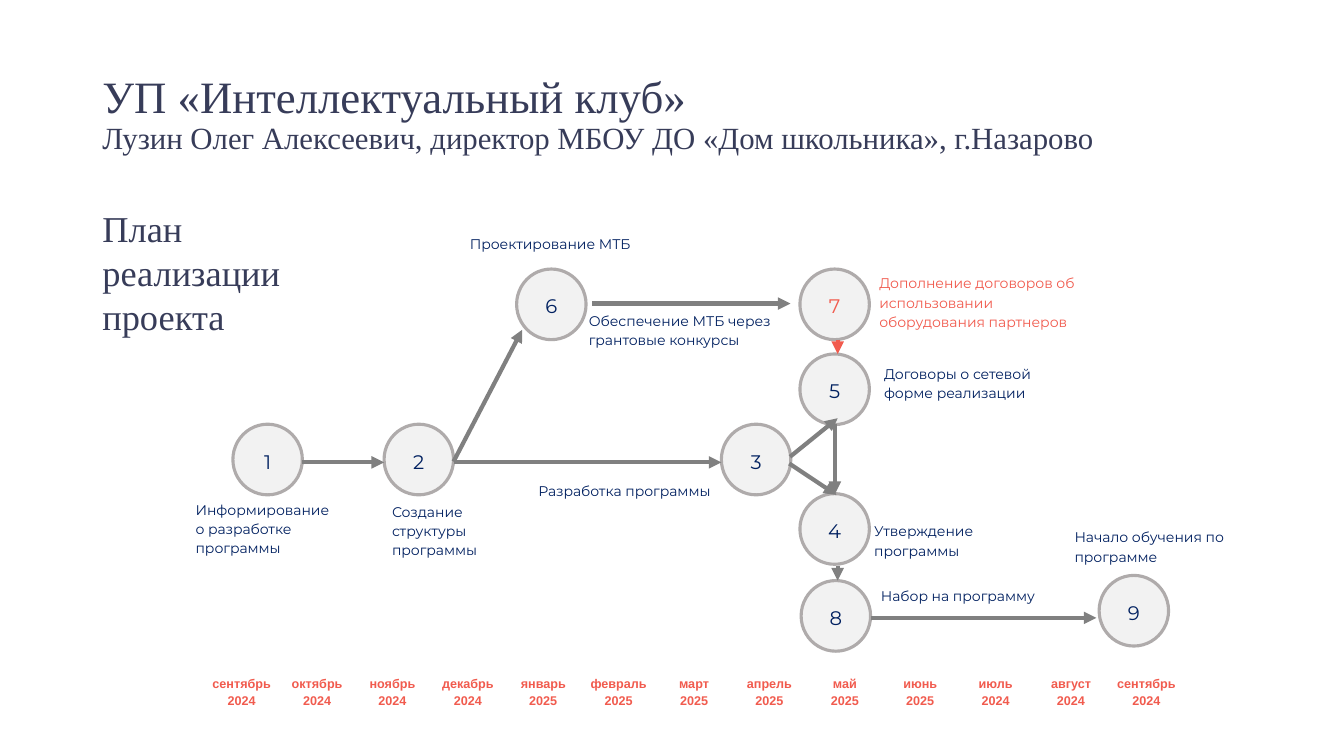
"""Build the project roadmap slide with numbered milestones and a month scale."""
from dataclasses import dataclass

from lxml.etree import SubElement
from pptx import Presentation
from pptx.dml.color import RGBColor
from pptx.enum.shapes import MSO_CONNECTOR, MSO_SHAPE
from pptx.enum.text import MSO_ANCHOR, PP_ALIGN
from pptx.oxml.ns import qn
from pptx.slide import Slide
from pptx.text.text import TextFrame
from pptx.util import Cm, Pt

SLATE = RGBColor(0x37, 0x3C, 0x59)
NAVY = RGBColor(0x00, 0x20, 0x60)
CORAL = RGBColor(0xF1, 0x5B, 0x4E)
GRAY = RGBColor(0x80, 0x80, 0x80)
RIM = RGBColor(0xAF, 0xAB, 0xAB)
PALE = RGBColor(0xF2, 0xF2, 0xF2)

SERIF = "Times New Roman"
SANS = "Montserrat"
DIAMETER_X, DIAMETER_Y = 1.75, 1.78
LABEL_HEIGHT = 2.16
HALF_MONTH = 0.95


@dataclass(frozen=True)
class Milestone:
    number: str
    left: float
    top: float
    color: RGBColor = NAVY


@dataclass(frozen=True)
class Label:
    lines: tuple[str, ...]
    left: float
    top: float
    width: float
    color: RGBColor = NAVY


@dataclass(frozen=True)
class Arrow:
    x1: float
    y1: float
    x2: float
    y2: float
    color: RGBColor = GRAY


@dataclass(frozen=True)
class Month:
    text: str
    margin: float = 0.18


MILESTONES = [
    Milestone("1", 5.87, 10.69),
    Milestone("2", 9.68, 10.69),
    Milestone("3", 18.18, 10.69),
    Milestone("8", 20.19, 14.63),
    Milestone("4", 20.16, 12.44),
    Milestone("5", 20.16, 8.92),
    Milestone("9", 27.7, 14.5),
    Milestone("7", 20.16, 6.78, CORAL),
    Milestone("6", 13.02, 6.78),
]
LABELS = [
    Label(("Информирование", "о разработке программы"), 4.68, 12.44, 4.32),
    Label(("Создание структуры программы",), 9.63, 12.49, 3.94),
    Label(("Разработка программы",), 13.32, 11.96, 5.74),
    Label(("Утверждение программы",), 21.78, 12.99, 4.39),
    Label(("Договоры о сетевой форме реализации",), 22.03, 9.02, 4.39),
    Label(("Обеспечение МТБ через грантовые конкурсы",), 14.59, 7.69, 5.74),
    Label(("Проектирование МТБ",), 11.59, 5.74, 5.74),
    Label(("Дополнение договоров об использовании оборудования партнеров",),
          21.91, 6.74, 5.66, CORAL),
    Label(("Набор на программу",), 21.95, 14.62, 5.66),
    Label(("Начало обучения по программе",), 26.83, 13.14, 4.39),
]
ARROWS = [
    Arrow(19.89, 11.68, 21.08, 12.47),
    Arrow(19.91, 11.51, 21.11, 10.54),
    Arrow(14.93, 7.65, 19.92, 7.65),
    Arrow(21.11, 8.56, 21.11, 8.92, CORAL),
    Arrow(21.11, 14.25, 21.11, 14.63),
    Arrow(21.95, 15.57, 27.63, 15.57),
    Arrow(7.62, 11.65, 9.68, 11.65),
    Arrow(11.43, 11.63, 13.16, 8.31),
    Arrow(11.43, 11.65, 18.18, 11.65),
    Arrow(21.04, 10.69, 21.04, 12.45),
]
MONTHS = [
    Month("сентябрь 2024"), Month("октябрь 2024"), Month("ноябрь 2024"),
    Month("декабрь 2024"), Month("январь 2025"), Month("февраль 2025"),
    Month("март 2025"), Month("апрель 2025"), Month("май 2025", 0.3),
    Month("июнь 2025"), Month("июль 2024"), Month("август 2024"),
    Month("сентябрь 2024"),
]


def add_run(paragraph, text: str, size: float, font: str, color: RGBColor,
            bold: bool = False) -> None:
    """Append one styled run to a paragraph."""
    run = paragraph.add_run()
    run.text = text
    run.font.size = Pt(size)
    run.font.name = font
    run.font.color.rgb = color
    run.font.bold = bold


def add_text_frame(slide: Slide, left: float, top: float, width: float,
                   height: float) -> TextFrame:
    """Add a wrapping text box and return its frame."""
    frame = slide.shapes.add_textbox(
        Cm(left), Cm(top), Cm(width), Cm(height)).text_frame
    frame.word_wrap = True
    return frame


def write_lines(frame: TextFrame, lines: tuple[str, ...], size: float,
                font: str, color: RGBColor, spacing: float) -> None:
    """Write each line as its own paragraph."""
    for index, line in enumerate(lines):
        paragraph = frame.add_paragraph() if index else frame.paragraphs[0]
        paragraph.line_spacing = spacing
        add_run(paragraph, line, size, font, color)


def add_headings(slide: Slide) -> None:
    """Add the project title, its author and the section heading."""
    title = add_text_frame(slide, 2.33, 1.07, 29.21, 3.68)
    title.vertical_anchor = MSO_ANCHOR.MIDDLE
    paragraph = title.paragraphs[0]
    paragraph.line_spacing = 0.9
    add_run(paragraph, "УП «Интеллектуальный клуб»", 32, SERIF, SLATE)
    paragraph.add_line_break()
    add_run(paragraph, "Лузин Олег Алексеевич, директор МБОУ ДО "
            "«Дом школьника», г.Назарово", 22, SERIF, SLATE)
    plan = add_text_frame(slide, 2.33, 5.08, 30.56, 12.73)
    write_lines(plan, ("План", "реализации", "проекта"), 26, SERIF, SLATE, 1.0)


def add_milestone(slide: Slide, milestone: Milestone) -> None:
    """Draw a numbered circle."""
    circle = slide.shapes.add_shape(
        MSO_SHAPE.OVAL, Cm(milestone.left), Cm(milestone.top),
        Cm(DIAMETER_X), Cm(DIAMETER_Y))
    circle.shadow.inherit = False
    circle.fill.solid()
    circle.fill.fore_color.rgb = PALE
    circle.line.color.rgb = RIM
    circle.line.width = Pt(2.25)
    circle.text_frame.vertical_anchor = MSO_ANCHOR.MIDDLE
    paragraph = circle.text_frame.paragraphs[0]
    paragraph.alignment = PP_ALIGN.CENTER
    paragraph.line_spacing = 1.15
    paragraph.space_after = Pt(10)
    add_run(paragraph, milestone.number, 14, SANS, milestone.color)


def add_arrow(slide: Slide, arrow: Arrow) -> None:
    """Draw a straight arrow between stages."""
    connector = slide.shapes.add_connector(
        MSO_CONNECTOR.STRAIGHT, Cm(arrow.x1), Cm(arrow.y1),
        Cm(arrow.x2), Cm(arrow.y2))
    connector.line.color.rgb = arrow.color
    connector.line.width = Pt(3)
    SubElement(connector.line._get_or_add_ln(), qn("a:tailEnd"), type="triangle")
    SubElement(connector._element.spPr, qn("a:effectLst"))


def add_month_scale(slide: Slide) -> None:
    """Add the half-month grid with a merged cell for each month."""
    columns = 2 * len(MONTHS)
    table = slide.shapes.add_table(
        2, columns, Cm(5.14), Cm(16.61), Cm(columns * HALF_MONTH), Cm(1.19)).table
    table.first_row = table.horz_banding = False
    table.rows[0].height, table.rows[1].height = Cm(0.41), Cm(0.78)
    for cell in table.iter_cells():
        cell.fill.background()
        cell.margin_top = cell.margin_bottom = Cm(0)
    for cell in table.rows[0].cells:
        SubElement(cell.text_frame.paragraphs[0]._p, qn("a:endParaRPr"), sz="100")
    for index, month in enumerate(MONTHS):
        cell = table.cell(1, 2 * index)
        cell.merge(table.cell(1, 2 * index + 1))
        cell.margin_left = cell.margin_right = Cm(month.margin)
        paragraph = cell.text_frame.paragraphs[0]
        paragraph.alignment = PP_ALIGN.CENTER
        paragraph.line_spacing = 1.15
        add_run(paragraph, month.text, 9, "Arial", CORAL, bold=True)


def main() -> None:
    """Assemble and save the slide."""
    deck = Presentation()
    deck.slide_width, deck.slide_height = Cm(33.87), Cm(19.05)
    slide = deck.slides.add_slide(deck.slide_layouts[6])
    add_headings(slide)
    for milestone in MILESTONES:
        add_milestone(slide, milestone)
    for label in LABELS:
        frame = add_text_frame(slide, label.left, label.top, label.width, LABEL_HEIGHT)
        write_lines(frame, label.lines, 10, SANS, label.color, 1.15)
    for arrow in ARROWS:
        add_arrow(slide, arrow)
    add_month_scale(slide)
    deck.save("out.pptx")


if __name__ == "__main__":
    main()
